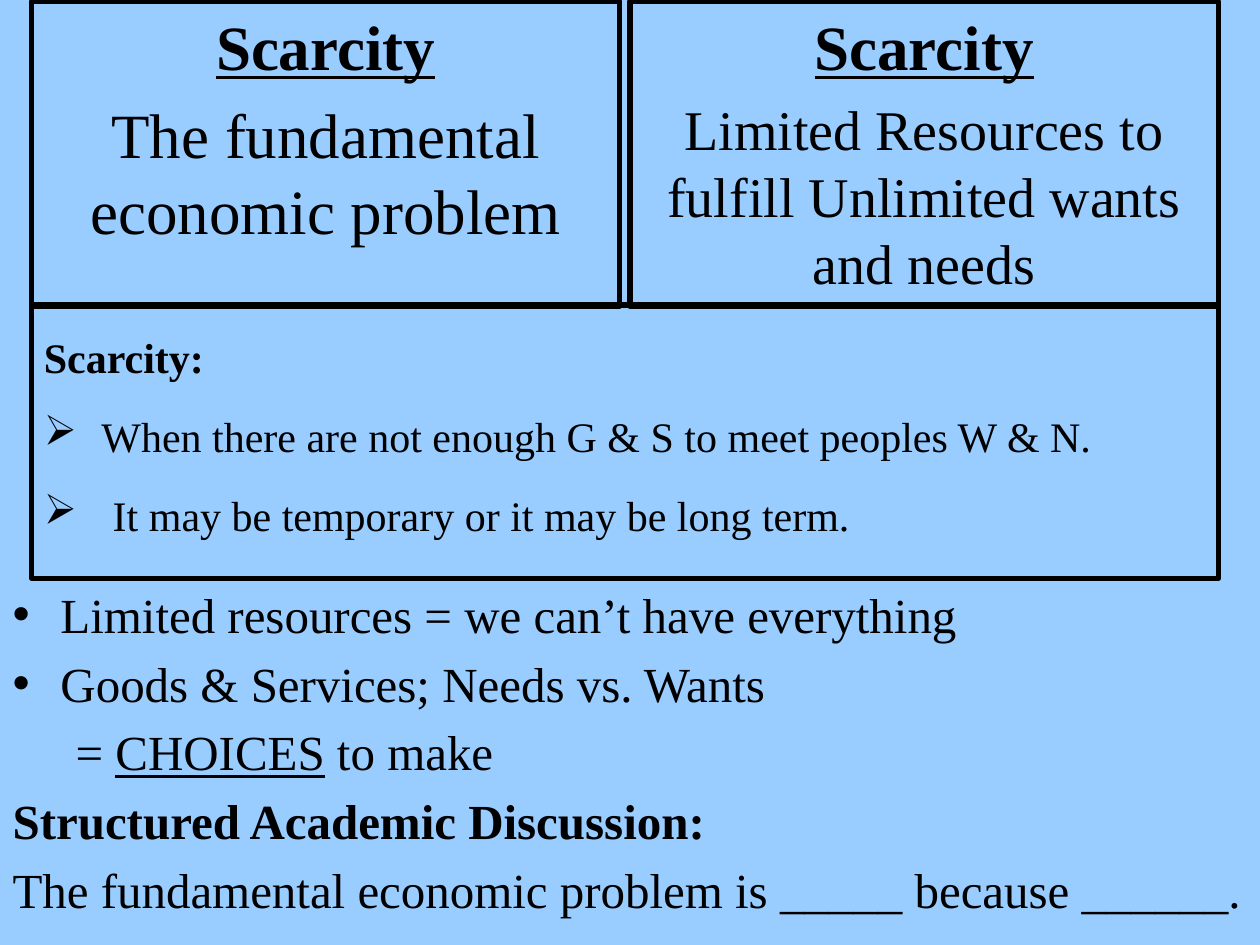
from dataclasses import dataclass

from lxml.etree import SubElement
from pptx import Presentation
from pptx.dml.color import RGBColor
from pptx.enum.shapes import MSO_SHAPE
from pptx.enum.text import MSO_ANCHOR, MSO_AUTO_SIZE, PP_ALIGN
from pptx.oxml.ns import qn
from pptx.util import Inches, Pt


@dataclass(frozen=True)
class Theme:
    background: RGBColor = RGBColor(0x99, 0xCC, 0xFF)
    ink: RGBColor = RGBColor(0, 0, 0)
    font: str = "Times New Roman"
    heading: int = 36
    answer: int = 32
    notes: int = 28
    definition: int = 24
    border: int = 3
    space_ratio: float = 0.2


THEME = Theme()
HANGING = Inches(0.38)


def write(paragraph, text, size, bold=False, underline=False):
    """Add one formatted run to a paragraph."""
    run = paragraph.add_run()
    run.text = text
    run.font.name = THEME.font
    run.font.size = Pt(size)
    run.font.bold = bold
    run.font.underline = underline
    run.font.color.rgb = THEME.ink


def next_paragraph(frame, size, align=PP_ALIGN.LEFT, bullet=None, hanging=False,
                   line_spacing=1.0):
    """Return a fresh paragraph, spaced in proportion to its type size."""
    first = frame.paragraphs[0]
    paragraph = frame.add_paragraph() if first.runs else first
    paragraph.alignment = align
    paragraph.line_spacing = line_spacing
    paragraph.space_before = Pt(size * THEME.space_ratio)
    properties = paragraph._p.get_or_add_pPr()
    indent = HANGING if hanging or bullet else 0
    properties.set("marL", str(indent))
    properties.set("indent", str(-indent))
    if bullet:
        SubElement(properties, qn("a:buChar"), char=bullet)
    else:
        SubElement(properties, qn("a:buNone"))
    return paragraph


def prepare_frame(shape):
    frame = shape.text_frame
    frame.word_wrap = True
    frame.auto_size = MSO_AUTO_SIZE.NONE
    frame.vertical_anchor = MSO_ANCHOR.TOP
    return frame


def outlined_box(slide, box):
    """Draw an unfilled bordered rectangle and return its text frame."""
    panel = slide.shapes.add_shape(MSO_SHAPE.RECTANGLE, *box)
    panel.shadow.inherit = False
    panel.fill.background()
    panel.line.color.rgb = THEME.ink
    panel.line.width = Pt(THEME.border)
    return prepare_frame(panel)


def add_term_card(slide, box, term, meaning, meaning_size):
    frame = outlined_box(slide, box)
    heading = next_paragraph(frame, THEME.heading, align=PP_ALIGN.CENTER)
    write(heading, term, THEME.heading, bold=True, underline=True)
    answer = next_paragraph(frame, meaning_size, align=PP_ALIGN.CENTER)
    write(answer, meaning, meaning_size)


def add_definition(slide, box, term, points):
    frame = outlined_box(slide, box)
    size = THEME.definition
    heading = next_paragraph(frame, size, hanging=True, line_spacing=1.4)
    write(heading, term, size, bold=True)
    for point in points:
        write(next_paragraph(frame, size, bullet="➢", line_spacing=1.4), point, size)


def add_class_notes(slide, box):
    body = slide.placeholders[1]
    body.left, body.top, body.width, body.height = box
    frame = prepare_frame(body)
    size = THEME.notes
    for note in ("Limited resources = we can’t have everything",
                 "Goods & Services; Needs vs. Wants"):
        write(next_paragraph(frame, size, bullet="•"), note, size)

    # Conclusion, set in by one tab stop
    choices = next_paragraph(frame, size)
    write(choices, "\t= ", size)
    write(choices, "CHOICES", size, underline=True)
    write(choices, " to make", size)

    # Discussion prompt
    write(next_paragraph(frame, size), "Structured Academic Discussion:", size, bold=True)
    write(next_paragraph(frame, size),
          "The fundamental economic problem is _____ because ______.", size)


def main():
    deck = Presentation()
    deck.slide_width, deck.slide_height = Inches(10), Inches(7.5)
    slide = deck.slides.add_slide(deck.slide_layouts[1])
    slide.background.fill.solid()
    slide.background.fill.fore_color.rgb = THEME.background
    unused_title = slide.shapes.title._element
    unused_title.getparent().remove(unused_title)

    left, right = Inches(0.25), Inches(9.67)
    card_top, card_width, card_height = Inches(0.01), Inches(4.67), Inches(2.42)
    definition_top, notes_top = Inches(2.42), Inches(4.59)

    # Notes under the frame
    add_class_notes(slide, (0, notes_top, deck.slide_width, Inches(2.23)))

    # Two term cards side by side
    add_term_card(slide, (right - card_width, card_top, card_width, card_height),
                  "Scarcity", "Limited Resources to fulfill Unlimited wants and needs",
                  THEME.answer)
    add_term_card(slide, (left, card_top, card_width, card_height),
                  "Scarcity", "The fundamental economic problem", THEME.heading)

    # Definition across both cards
    add_definition(slide, (left, definition_top, right - left, notes_top - definition_top),
                   "Scarcity:",
                   (" When there are not enough G & S to meet peoples W & N.",
                    "  It may be temporary or it may be long term."))

    deck.save("out.pptx")


if __name__ == "__main__":
    main()
